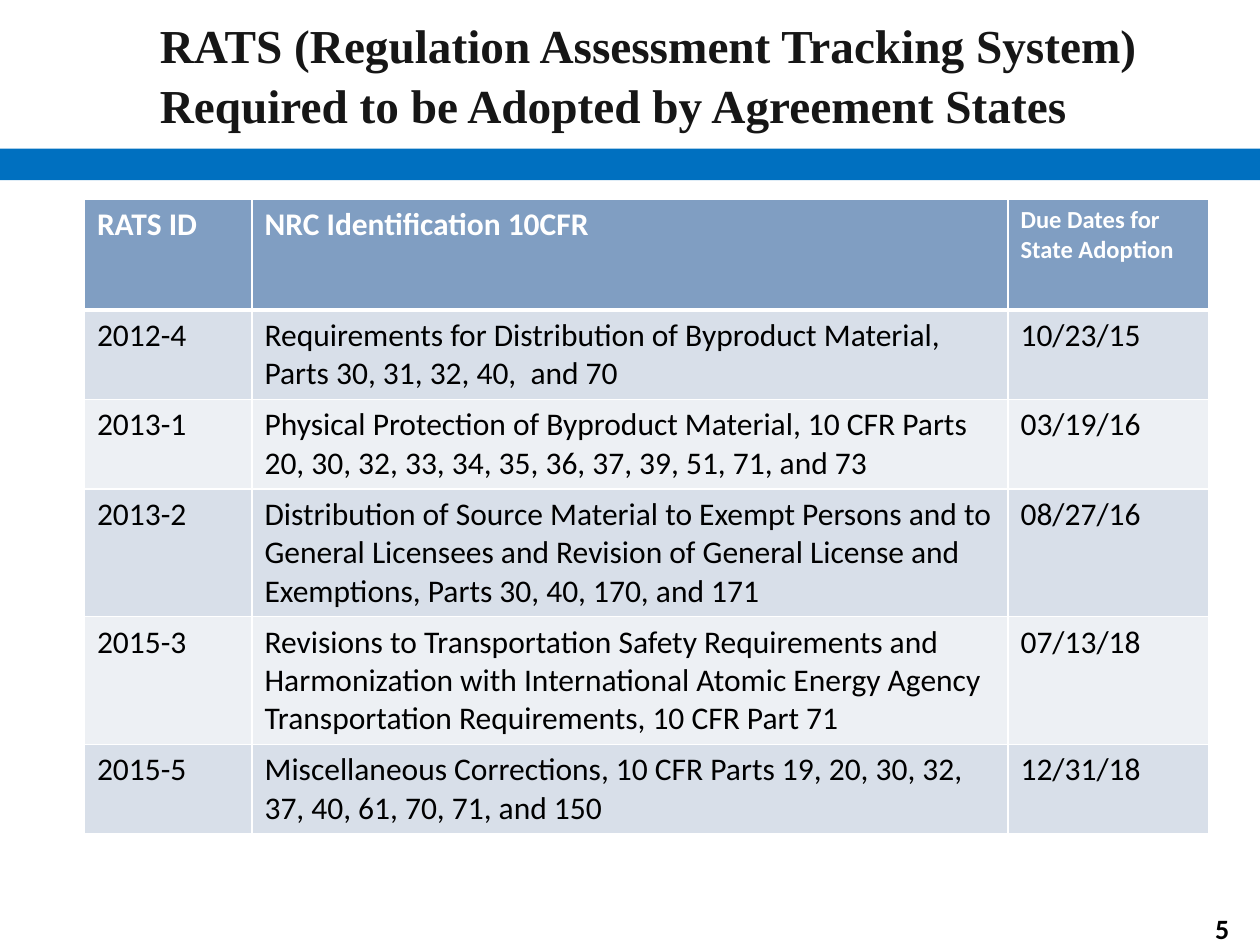
from typing import NamedTuple

from lxml import etree
from pptx import Presentation
from pptx.dml.color import RGBColor
from pptx.enum.shapes import MSO_SHAPE
from pptx.enum.text import MSO_ANCHOR, PP_ALIGN
from pptx.oxml.ns import qn
from pptx.util import Inches, Pt

RECTANGLE = MSO_SHAPE.RECTANGLE
MIDDLE = MSO_ANCHOR.MIDDLE
LEFT, CENTER = PP_ALIGN.LEFT, PP_ALIGN.CENTER
BODY_FONT, TITLE_FONT = "Calibri", "Times New Roman"
WHITE, BLACK, INK = "FFFFFF", "000000", "161616"
BAR_BLUE, HEADER_BLUE = "0070C0", "809EC2"
BANDS = ("D8DFE9", "EDF0F4")
COLUMN_WIDTHS = (1.33, 6, 1.59)
HEADER_HEIGHT, PADDING_HEIGHT, LINE_HEIGHT = 0.88, 0.1, 0.305
THIN, THICK = 1, 3


class Style(NamedTuple):
    """Look of a span of text."""
    size: float
    color: str
    bold: bool = False
    font: str = BODY_FONT


class Label(NamedTuple):
    """A text box with one paragraph."""
    text: str
    left: float
    top: float
    width: float
    height: float
    style: Style
    align: PP_ALIGN = LEFT
    spacing: float = 1.0


class Rule(NamedTuple):
    """A regulation and its adoption date."""
    rats_id: str
    identification: str
    due_date: str
    line_count: int


HEADER_STYLE = Style(18, WHITE, True)
HEADERS = (
    ("RATS ID", HEADER_STYLE),
    ("NRC Identification 10CFR", HEADER_STYLE),
    ("Due Dates for State Adoption", Style(14, WHITE, True)),
)
BODY_STYLE = Style(18, BLACK)
RULES = (
    Rule("2012-4", "Requirements for Distribution of Byproduct Material, "
         "Parts 30, 31, 32, 40,  and 70", "10/23/15", 2),
    Rule("2013-1", "Physical Protection of Byproduct Material, 10 CFR Parts "
         "20, 30, 32, 33, 34, 35, 36, 37, 39, 51, 71, and 73", "03/19/16", 2),
    Rule("2013-2", "Distribution of Source Material to Exempt Persons and to "
         "General Licensees and Revision of General License and Exemptions, "
         "Parts 30, 40, 170, and 171", "08/27/16", 3),
    Rule("2015-3", "Revisions to Transportation Safety Requirements and "
         "Harmonization with International Atomic Energy Agency "
         "Transportation Requirements, 10 CFR Part 71", "07/13/18", 3),
    Rule("2015-5", "Miscellaneous Corrections, 10 CFR Parts 19, 20, 30, 32, "
         "37, 40, 61, 70, 71, and 150", "12/31/18", 2),
)
PAGE_NUMBER = Label("5", 9.41, 7.23, 0.58, 0.27, Style(16, BLACK, True), CENTER)
TITLE = Label("RATS (Regulation Assessment Tracking System) "
              "Required to be Adopted by Agreement States",
              1.17, 0.04, 8.66, 1.08, Style(27, INK, True, TITLE_FONT),
              spacing=1.05)


def rgb(value: str) -> RGBColor:
    """Turn a hex string into a colour."""
    return RGBColor.from_string(value)


def add_span(para, text: str, style: Style) -> None:
    """Add a styled run to a paragraph."""
    span = para.add_run()
    span.text = text
    span.font.size = Pt(style.size)
    span.font.name = style.font
    span.font.bold = style.bold
    span.font.color.rgb = rgb(style.color)


def add_bar(page) -> None:
    """Draw the blue bar under the title."""
    bar = page.shapes.add_shape(RECTANGLE, Inches(0), Inches(1.18),
                                Inches(10), Inches(0.25))
    bar.shadow.inherit = False
    bar.fill.solid()
    bar.fill.fore_color.rgb = rgb(BAR_BLUE)
    bar.line.fill.background()


def add_label(page, label: Label) -> None:
    """Draw a wrapped, vertically centred text box."""
    box = page.shapes.add_textbox(Inches(label.left), Inches(label.top),
                                  Inches(label.width), Inches(label.height))
    frame = box.text_frame
    frame.word_wrap = True
    frame.vertical_anchor = MIDDLE
    para = frame.paragraphs[0]
    para.alignment = label.align
    para.line_spacing = label.spacing
    add_span(para, label.text, label.style)


def set_borders(cell, top: float, bottom: float) -> None:
    """Give a cell white borders, thin at the sides."""
    properties = cell._tc.get_or_add_tcPr()
    widths = {"a:lnL": THIN, "a:lnR": THIN, "a:lnT": top, "a:lnB": bottom}
    for position, (tag, width) in enumerate(widths.items()):
        line = etree.Element(qn(tag), w=str(Pt(width)))
        fill = etree.SubElement(line, qn("a:solidFill"))
        etree.SubElement(fill, qn("a:srgbClr"), val=WHITE)
        properties.insert(position, line)


def fill_cell(cell, text: str, style: Style, color: str,
              top: float, bottom: float) -> None:
    """Set the text, fill and borders of a cell."""
    add_span(cell.text_frame.paragraphs[0], text, style)
    cell.fill.solid()
    cell.fill.fore_color.rgb = rgb(color)
    set_borders(cell, top, bottom)


def add_rules_table(page) -> None:
    """Draw the table of regulations with banded rows."""
    heights = [HEADER_HEIGHT] + [PADDING_HEIGHT + LINE_HEIGHT * rule.line_count
                                 for rule in RULES]
    table = page.shapes.add_table(
        len(heights), len(COLUMN_WIDTHS), Inches(0.67), Inches(1.58),
        Inches(sum(COLUMN_WIDTHS)), Inches(sum(heights))).table
    for column, width in zip(table.columns, COLUMN_WIDTHS):
        column.width = Inches(width)
    for row, height in zip(table.rows, heights):
        row.height = Inches(height)
    for column, (text, style) in enumerate(HEADERS):
        fill_cell(table.cell(0, column), text, style, HEADER_BLUE, THIN, THICK)
    for index, rule in enumerate(RULES):
        top = THIN if index else THICK
        texts = (rule.rats_id, rule.identification, rule.due_date)
        for column, text in enumerate(texts):
            fill_cell(table.cell(index + 1, column), text, BODY_STYLE,
                      BANDS[index % len(BANDS)], top, THIN)


def main() -> None:
    """Build and save the slide."""
    deck = Presentation()
    deck.slide_width, deck.slide_height = Inches(10), Inches(7.5)
    page = deck.slides.add_slide(deck.slide_layouts[6])
    add_bar(page)
    add_label(page, PAGE_NUMBER)
    add_rules_table(page)
    add_label(page, TITLE)
    deck.save("out.pptx")


if __name__ == "__main__":
    main()
